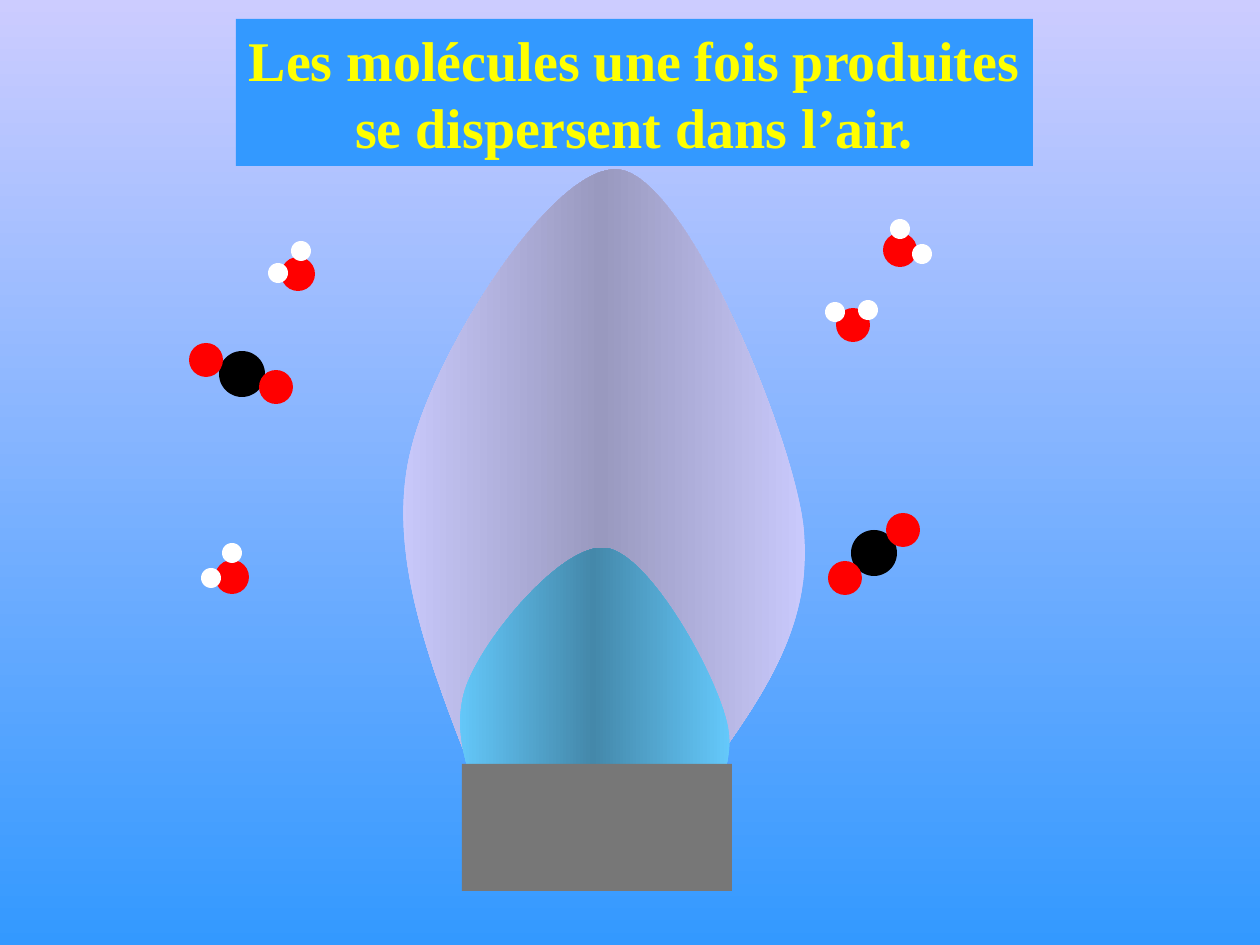
from copy import deepcopy

from pptx import Presentation
from pptx.dml.color import RGBColor
from pptx.enum.shapes import MSO_SHAPE
from pptx.enum.text import MSO_ANCHOR, MSO_AUTO_SIZE, PP_ALIGN
from pptx.oxml.ns import qn
from pptx.util import Pt
from lxml.etree import SubElement

SCALE = 914400 / 126

LILAC = RGBColor(0xCC, 0xCC, 0xFF)
MAUVE = RGBColor(0x99, 0x99, 0xBF)
SKY = RGBColor(0x33, 0x99, 0xFF)
CYAN = RGBColor(0x66, 0xCC, 0xFF)
TEAL = RGBColor(0x44, 0x88, 0xAA)
GREY = RGBColor(0x77, 0x77, 0x77)
BLACK = RGBColor(0, 0, 0)
RED = RGBColor(0xFF, 0, 0)
WHITE = RGBColor(0xFF, 0xFF, 0xFF)
YELLOW = RGBColor(0xFF, 0xFF, 0)

ATOMS = {"C": (46, BLACK), "O": (34, RED), "H": (20, WHITE)}

# Each molecule: formula order, then the centre of each atom
MOLS = [
    ("COO", [(874, 553), (903, 530), (845, 578)]),
    ("OHH", [(853, 325), (868, 310), (835, 312)]),
    ("OHH", [(232, 577), (232, 553), (211, 578)]),
    ("COO", [(242, 374), (276, 387), (206, 360)]),
    ("OHH", [(900, 250), (922, 254), (900, 229)]),
    ("OHH", [(298, 274), (301, 251), (278, 273)]),
]

# Each flame: start point, then three points for each curve
OUTER = [(470, 767),
         (428, 659), (386, 549), (411, 450),
         (435, 350), (557, 158), (621, 170),
         (685, 181), (788, 421), (803, 522),
         (816, 621), (764, 694), (712, 767)]
INNER = [(505, 853),
         (477, 798), (449, 742), (465, 690),
         (481, 640), (563, 542), (606, 548),
         (650, 554), (718, 677), (728, 727),
         (737, 777), (702, 815), (667, 853)]

TITLE = ["Les molécules une fois produites", "se dispersent dans l’air."]


def px(n):
    return round(n * SCALE)


def clean(shape):
    shape.shadow.inherit = False
    shape.line.fill.background()


def add_solid(shapes, kind, box, color):
    shape = shapes.add_shape(kind, *map(px, box))
    clean(shape)
    shape.fill.solid()
    shape.fill.fore_color.rgb = color
    return shape


def blend(fill, ends, angle):
    fill.gradient()
    fill.gradient_angle = angle
    for stop, color in zip(fill.gradient_stops, ends):
        stop.color.rgb = color


def bend(shape):
    """Turn each run of three line points into one Bezier curve."""
    track = next(shape._element.iter(qn("a:path")))
    lines = track.findall(qn("a:lnTo"))
    for i in range(0, len(lines), 3):
        curve = SubElement(track, qn("a:cubicBezTo"))
        for line in lines[i:i + 3]:
            curve.append(line[0])
            track.remove(line)


def add_flame(shapes, points, edge, core):
    """Draw a curved flame that shades from its edges to its core."""
    pen = shapes.build_freeform(*points[0], scale=SCALE)
    pen.add_line_segments(points[1:], close=False)
    shape = pen.convert_to_shape()
    bend(shape)
    clean(shape)
    blend(shape.fill, (edge, edge), 0)
    first = next(shape._element.iter(qn("a:gs")))
    mid = deepcopy(first)
    mid.set("pos", "50000")
    first.addnext(mid)
    shape.fill.gradient_stops[1].color.rgb = core


def add_burner(shapes):
    parts = shapes.add_group_shape().shapes
    add_flame(parts, OUTER, LILAC, MAUVE)
    add_flame(parts, INNER, CYAN, TEAL)
    add_solid(parts, MSO_SHAPE.RECTANGLE, (462, 764, 270, 127), GREY)


def add_mol(shapes, names, spots):
    parts = shapes.add_group_shape().shapes
    for name, (x, y) in zip(names, spots):
        size, color = ATOMS[name]
        box = (x - size // 2, y - size // 2, size, size)
        add_solid(parts, MSO_SHAPE.OVAL, box, color)


def add_title(shapes):
    box = add_solid(shapes, MSO_SHAPE.RECTANGLE, (236, 19, 797, 147), SKY)
    frame = box.text_frame
    look = {"word_wrap": False, "auto_size": MSO_AUTO_SIZE.SHAPE_TO_FIT_TEXT,
            "vertical_anchor": MSO_ANCHOR.TOP}
    for key, val in look.items():
        setattr(frame, key, val)
    frame.text = "\n".join(TITLE)
    style = {"name": "Times New Roman", "size": Pt(32), "bold": True}
    for para in frame.paragraphs:
        para.alignment = PP_ALIGN.CENTER
        font = para.runs[0].font
        for key, val in style.items():
            setattr(font, key, val)
        font.color.rgb = YELLOW


def main():
    prs = Presentation()
    prs.slide_width, prs.slide_height = px(1260), px(945)
    slide = prs.slides.add_slide(prs.slide_layouts[6])
    blend(slide.background.fill, (LILAC, SKY), 270)
    add_burner(slide.shapes)
    for names, spots in MOLS:
        add_mol(slide.shapes, names, spots)
    add_title(slide.shapes)
    prs.save("out.pptx")


if __name__ == "__main__":
    main()
